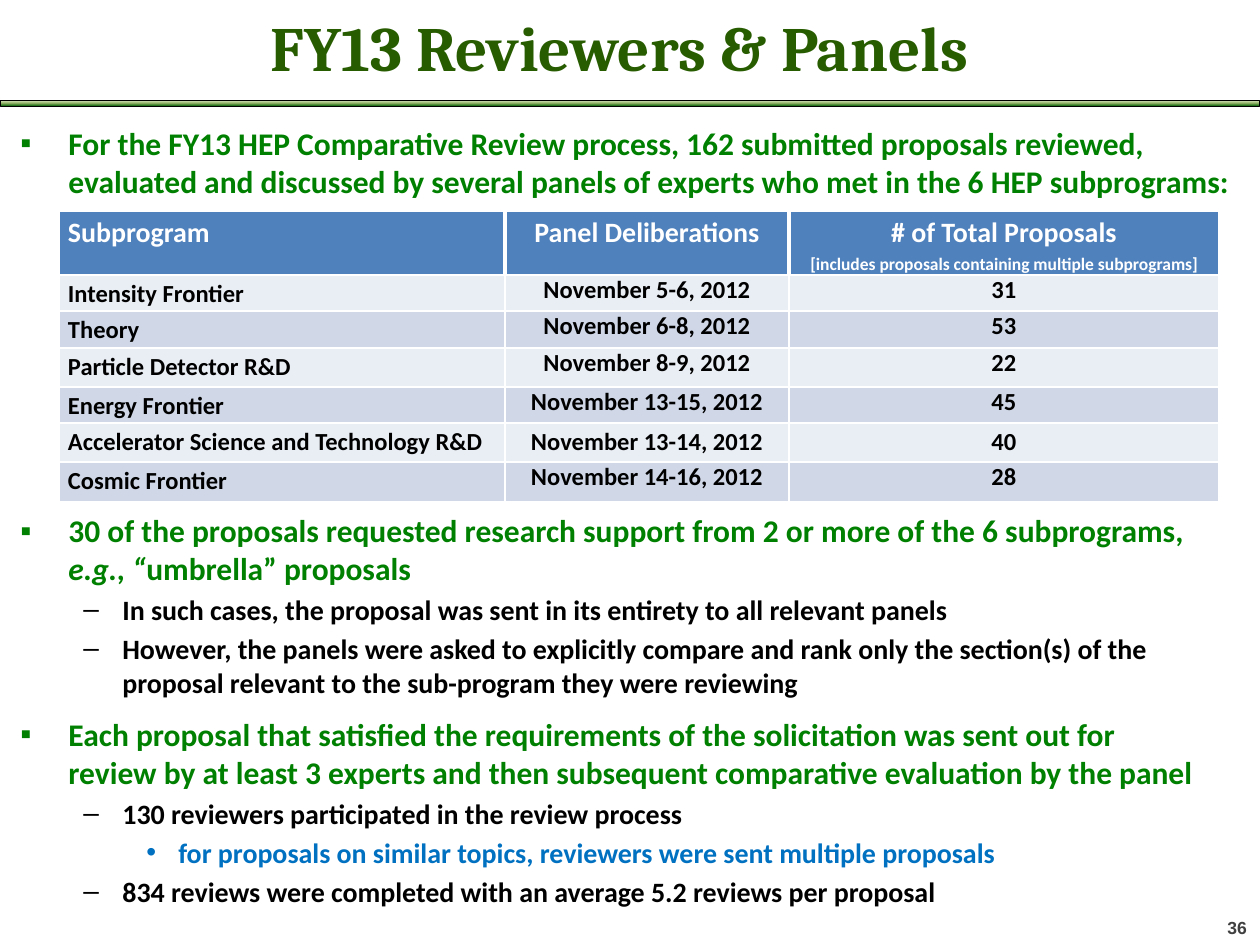
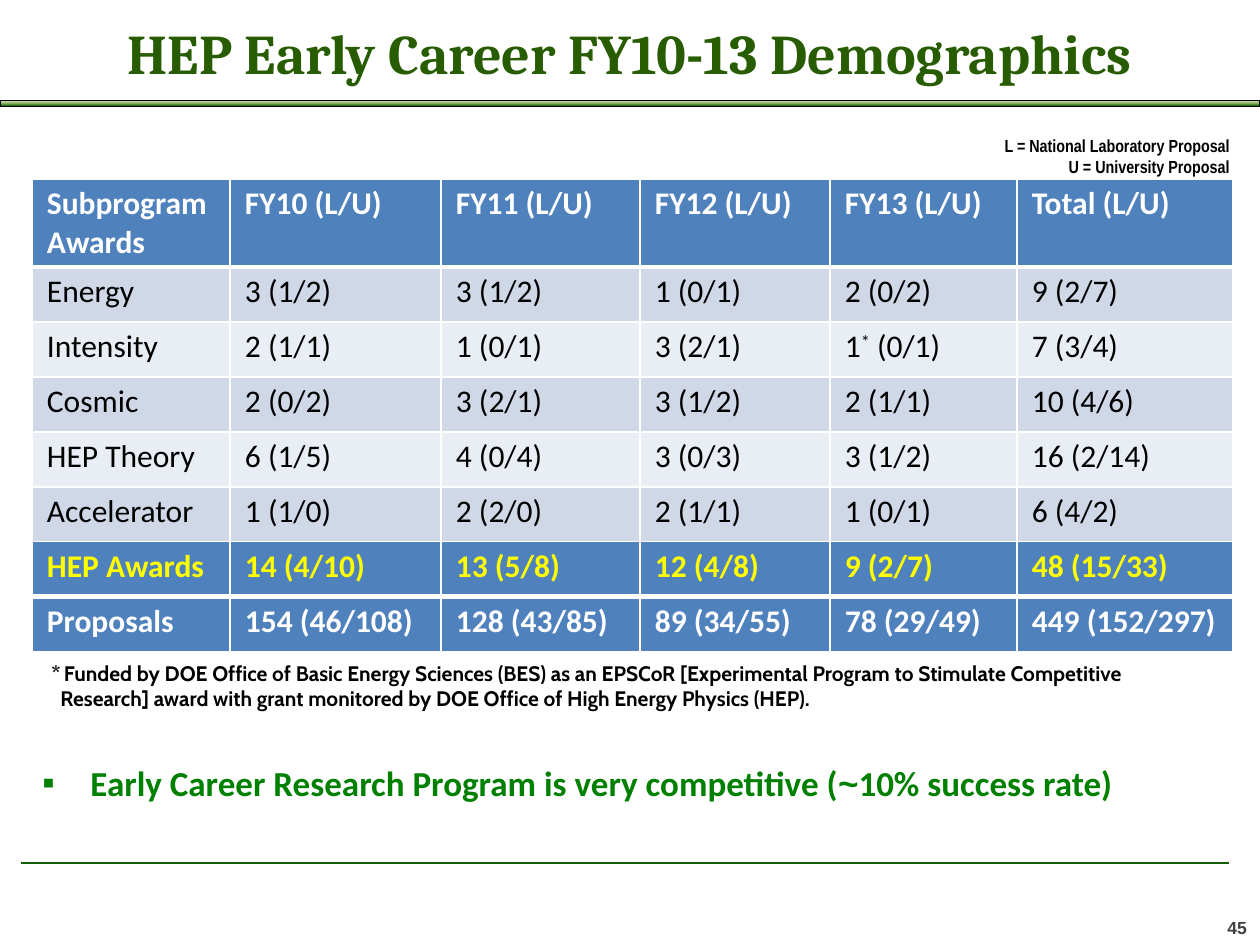
from dataclasses import dataclass

from lxml import etree
from pptx import Presentation
from pptx.dml.color import RGBColor
from pptx.enum.shapes import MSO_CONNECTOR, MSO_SHAPE
from pptx.enum.text import MSO_ANCHOR, MSO_AUTO_SIZE, PP_ALIGN
from pptx.oxml.ns import qn
from pptx.util import Pt

LEFT, CENTER, RIGHT = PP_ALIGN.LEFT, PP_ALIGN.CENTER, PP_ALIGN.RIGHT
MIDDLE, NO_FIT = MSO_ANCHOR.MIDDLE, MSO_AUTO_SIZE.NONE
RECTANGLE, STRAIGHT = MSO_SHAPE.RECTANGLE, MSO_CONNECTOR.STRAIGHT
SCALE = 914400 / 126
TITLE_ONLY = 5


@dataclass(frozen=True)
class Theme:
    heading: str = "Cambria"
    body: str = "Calibri"
    plain: str = "Arial"
    narrow: str = "Arial Narrow"
    note: str = "Cabin"
    title: str = "285C00"
    point: str = "008000"
    detail: str = "0070C0"
    black: str = "000000"
    white: str = "FFFFFF"
    number: str = "404040"
    rule: str = "135C00"
    header: str = "4F81BD"
    awards: str = "FFFF00"
    light: str = "E9EDF4"
    dark: str = "D0D8E8"
    band: tuple = ((0, "DDEBCF"), (50, "9CB86E"), (100, "156B13"))
    small: int = 10
    note_size: int = 12
    cell_size: int = 14
    sub_size: int = 16
    point_size: int = 18
    closing_size: int = 20


THEME = Theme()

PANELS = {
    "title": ("FY13 Reviewers & Panels", 36, (42, 10, 1155, 73)),
    "number": "36",
    "points_box": (8, 118, 1243, 809),
    "points": [
        (0, 0, ["For the FY13 HEP Comparative Review process, 162 submitted proposals reviewed, "
                "evaluated and discussed by several panels of experts who met in the 6 HEP subprograms:"]),
        (0, 178, ["30 of the proposals requested research support from 2 or more of the 6 subprograms, ",
                  ("e.g., “", {"italic": True}), "umbrella” proposals"]),
        (1, 3.2, ["In such cases, the proposal was sent in its entirety to all relevant panels"]),
        (1, 3.2, ["However, the panels were asked to explicitly compare and rank only the section(s) "
                  "of the proposal relevant to the sub-program they were reviewing"]),
        (0, 9.3, ["Each proposal that satisfied the requirements of the solicitation was sent out for \n"
                  "review by at least 3 experts and then subsequent comparative evaluation by the panel"]),
        (1, 3.2, ["130 reviewers participated in the review process"]),
        (2, 3.2, ["for proposals on similar topics, reviewers were sent multiple proposals"]),
        (1, 3.2, ["834 reviews were completed with an average 5.2 reviews per proposal"]),
    ],
    "table_at": (59, 211),
    "columns": (446, 284, 430),
    "row_heights": (64, 36, 37, 39, 36, 39, 40),
    "header": ["Subprogram", "Panel Deliberations", "# of Total Proposals"],
    "header_note": "[includes proposals containing multiple subprograms]",
    "rows": [
        ["Intensity Frontier", "November 5-6, 2012", "31"],
        ["Theory", "November 6-8, 2012", "53"],
        ["Particle Detector R&D", "November 8-9, 2012", "22"],
        ["Energy Frontier", "November 13-15, 2012", "45"],
        ["Accelerator Science and Technology R&D", "November 13-14, 2012", "40"],
        ["Cosmic Frontier", "November 14-16, 2012", "28"],
    ],
    "loose_row": 5,
}

DEMOGRAPHICS = {
    "title": ("HEP Early Career FY10-13 Demographics", 32, (63, 3, 1134, 98)),
    "number": "45",
    "legend_box": (989, 129, 253, 55),
    "legend": ["L = National Laboratory Proposal", "U = University Proposal"],
    "table_at": (32, 179),
    "columns": (198, 211, 199, 190, 187, 216),
    "row_heights": (88,) + (55,) * 7,
    "rows": [
        ["Subprogram\nAwards", "FY10 (L/U)", "FY11 (L/U)", "FY12 (L/U)", "FY13 (L/U)", "Total (L/U)"],
        ["Energy", "3 (1/2)", "3 (1/2)", "1 (0/1)", "2 (0/2)", "9 (2/7)"],
        ["Intensity", "2 (1/1)", "1 (0/1)", "3 (2/1)", "1* (0/1)", "7 (3/4)"],
        ["Cosmic", "2 (0/2)", "3 (2/1)", "3 (1/2)", "2 (1/1)", "10 (4/6)"],
        ["HEP Theory", "6 (1/5)", "4 (0/4)", "3 (0/3)", "3 (1/2)", "16 (2/14)"],
        ["Accelerator", "1 (1/0)", "2 (2/0)", "2 (1/1)", "1 (0/1)", "6 (4/2)"],
        ["HEP Awards", "14 (4/10)", "13 (5/8)", "12 (4/8)", "9 (2/7)", "48 (15/33)"],
        ["Proposals", "154 (46/108)", "128 (43/85)", "89 (34/55)", "78 (29/49)", "449 (152/297)"],
    ],
    "footnote_box": (39, 654, 1189, 63),
    "footnote": [
        (0, ["*", (" ", {"size": 8}),
             "Funded by DOE Office of Basic Energy Sciences (BES) as an EPSCoR "
             "[Experimental Program to Stimulate Competitive"]),
        (9, ["Research] award with grant monitored by DOE Office of High Energy Physics (HEP)."]),
    ],
    "closing_box": (30, 755, 1187, 91),
    "closing": ["Early Career Research Program is very competitive (",
                ("~", {"name": THEME.plain}), "10% success rate)"],
    "rule": (21, 863, 1229, 863),
}

LEVELS = [
    {"mark": "▪", "indent": 48, "hang": 48, "size": THEME.point_size, "color": THEME.point},
    {"mark": "–", "indent": 102, "hang": 39, "size": THEME.sub_size, "color": THEME.black},
    {"mark": "•", "indent": 158, "hang": 32, "size": THEME.sub_size, "color": THEME.detail},
]


def px(*lengths):
    return [round(length * SCALE) for length in lengths]


def write(paragraph, parts, **base):
    for part in parts:
        text, extra = (part, {}) if isinstance(part, str) else part
        form = {"name": THEME.body, "bold": True, **base, **extra}
        color, raised = form.pop("color"), form.pop("raised", 0)
        form["size"] = Pt(form["size"])
        for index, line in enumerate(text.split("\n")):
            if index:
                paragraph.add_line_break()
            run = paragraph.add_run()
            run.text = line
            for key, value in form.items():
                setattr(run.font, key, value)
            run.font.color.rgb = RGBColor.from_string(color)
            if raised:
                run._r.get_or_add_rPr().set("baseline", str(raised * 1000))


def indent(paragraph, left, hang=0):
    properties = paragraph._p.get_or_add_pPr()
    for key, value in zip(("marL", "indent"), px(left, -hang)):
        properties.set(key, str(value))
    return properties


def bullet(paragraph, level):
    properties = indent(paragraph, level["indent"], level["hang"])
    etree.SubElement(properties, qn("a:buFont")).set("typeface", THEME.plain)
    etree.SubElement(properties, qn("a:buChar")).set("char", level["mark"])


def next_paragraph(frame, index):
    return frame.add_paragraph() if index else frame.paragraphs[0]


def add_frame(slide, box, wrap=True):
    frame = slide.shapes.add_textbox(*px(*box)).text_frame
    frame.word_wrap = wrap
    return frame


def add_band(slide):
    band = slide.shapes.add_shape(RECTANGLE, *px(0, 100, 1260, 6))
    band.shadow.inherit = False
    band.line.color.rgb = RGBColor.from_string(THEME.black)
    band.line.width = Pt(0.5)
    band.fill.gradient()
    band.fill.gradient_angle = 270
    stops = band._element.spPr.find(qn("a:gradFill")).find(qn("a:gsLst"))
    for stop in list(stops):
        stops.remove(stop)
    for position, color in THEME.band:
        stop = etree.SubElement(stops, qn("a:gs"), pos=str(position * 1000))
        etree.SubElement(stop, qn("a:srgbClr"), val=color)


def start_slide(deck, content):
    slide = deck.slides.add_slide(deck.slide_layouts[TITLE_ONLY])
    text, size, box = content["title"]
    title = slide.shapes.title
    for key, value in zip(("left", "top", "width", "height"), px(*box)):
        setattr(title, key, value)
    frame = title.text_frame
    frame.auto_size, frame.vertical_anchor = NO_FIT, MIDDLE
    frame.paragraphs[0].alignment = CENTER
    write(frame.paragraphs[0], [text], name=THEME.heading, size=size, color=THEME.title)
    add_band(slide)
    number = add_frame(slide, (1215, 911, 45, 34), wrap=False)
    write(number.paragraphs[0], [content["number"]],
          name=THEME.plain, size=THEME.small, color=THEME.number)
    return slide


def add_grid(slide, content):
    columns, heights = content["columns"], content["row_heights"]
    grid = slide.shapes.add_table(len(heights), len(columns), *px(
        *content["table_at"], sum(columns), sum(heights))).table
    grid.horz_banding = False
    for column, width in zip(grid.columns, px(*columns)):
        column.width = width
    for row, height in zip(grid.rows, px(*heights)):
        row.height = height
    return grid


def format_cell(cell, fill, margins, borders):
    widths = {"L": 1, "R": 1, "T": 1, "B": 1, **borders}
    properties = cell._tc.get_or_add_tcPr()
    for side, width in widths.items():
        line = etree.SubElement(properties, qn(f"a:ln{side}"), w=str(Pt(width)))
        solid = etree.SubElement(line, qn("a:solidFill"))
        etree.SubElement(solid, qn("a:srgbClr"), val=THEME.white)
    cell.fill.solid()
    cell.fill.fore_color.rgb = RGBColor.from_string(fill)
    across, down = px(*margins)
    cell.margin_left = cell.margin_right = across
    cell.margin_top = cell.margin_bottom = down


def build_panels(deck):
    slide = start_slide(deck, PANELS)
    points = add_frame(slide, PANELS["points_box"])
    for index, (depth, gap, parts) in enumerate(PANELS["points"]):
        paragraph, level = next_paragraph(points, index), LEVELS[depth]
        if gap:
            paragraph.space_before = Pt(gap)
        bullet(paragraph, level)
        write(paragraph, parts, size=level["size"], color=level["color"])

    grid = add_grid(slide, PANELS)
    header_borders = [{"R": 2.25}, {"L": 2.25, "R": 2.25}, {"L": 2.25}]
    for r, row in enumerate([PANELS["header"]] + PANELS["rows"]):
        fill = (THEME.dark, THEME.light)[r % 2] if r else THEME.header
        color = THEME.black if r else THEME.white
        size = THEME.cell_size if r else THEME.sub_size
        for c, text in enumerate(row):
            cell = grid.cell(r, c)
            format_cell(cell, fill, (9, 0), {} if r else header_borders[c])
            lines = [(text, size)]
            if r == 0 and c == len(row) - 1:
                lines.append((PANELS["header_note"], THEME.small))
            for index, (line, line_size) in enumerate(lines):
                paragraph = next_paragraph(cell.text_frame, index)
                paragraph.alignment = CENTER if c else LEFT
                if c == 0 or r in (0, PANELS["loose_row"]):
                    paragraph.line_spacing = 1.15
                write(paragraph, [line], size=line_size, color=color)


def build_demographics(deck):
    slide = start_slide(deck, DEMOGRAPHICS)
    grid = add_grid(slide, DEMOGRAPHICS)
    rows = DEMOGRAPHICS["rows"]
    awards, proposals = len(rows) - 2, len(rows) - 1
    strong = {0: THEME.white, awards: THEME.awards, proposals: THEME.white}
    borders = {0: {"B": 3}, 1: {"T": 3}, awards: {"B": 3}, proposals: {"T": 3}}
    for r, row in enumerate(rows):
        fill = THEME.header if r in strong else (THEME.light, THEME.dark)[r % 2]
        for c, text in enumerate(row):
            cell = grid.cell(r, c)
            format_cell(cell, fill, (15, 6), borders.get(r, {}))
            for index, line in enumerate(text.split("\n")):
                before, star, after = line.partition("*")
                parts = [before, (star, {"raised": 30}), after] if star else [line]
                write(next_paragraph(cell.text_frame, index), parts, size=THEME.point_size,
                      color=strong.get(r, THEME.black), bold=r in strong)

    legend = add_frame(slide, DEMOGRAPHICS["legend_box"], wrap=False)
    for index, line in enumerate(DEMOGRAPHICS["legend"]):
        paragraph = next_paragraph(legend, index)
        paragraph.alignment = RIGHT
        write(paragraph, [line], name=THEME.narrow, size=THEME.small, color=THEME.black)

    footnote = add_frame(slide, DEMOGRAPHICS["footnote_box"], wrap=False)
    for index, (left, parts) in enumerate(DEMOGRAPHICS["footnote"]):
        paragraph = next_paragraph(footnote, index)
        indent(paragraph, left)
        write(paragraph, parts, name=THEME.note, size=THEME.note_size, color=THEME.black)

    closing = add_frame(slide, DEMOGRAPHICS["closing_box"]).paragraphs[0]
    bullet(closing, LEVELS[0])
    write(closing, DEMOGRAPHICS["closing"], size=THEME.closing_size, color=THEME.point)

    rule = slide.shapes.add_connector(STRAIGHT, *px(*DEMOGRAPHICS["rule"]))
    rule.line.color.rgb = RGBColor.from_string(THEME.rule)
    rule.line.width = Pt(1.25)
    etree.SubElement(rule._element.spPr, qn("a:effectLst"))


def main():
    deck = Presentation()
    deck.slide_width, deck.slide_height = px(1260, 945)
    build_panels(deck)
    build_demographics(deck)
    deck.save("out.pptx")


if __name__ == "__main__":
    main()
